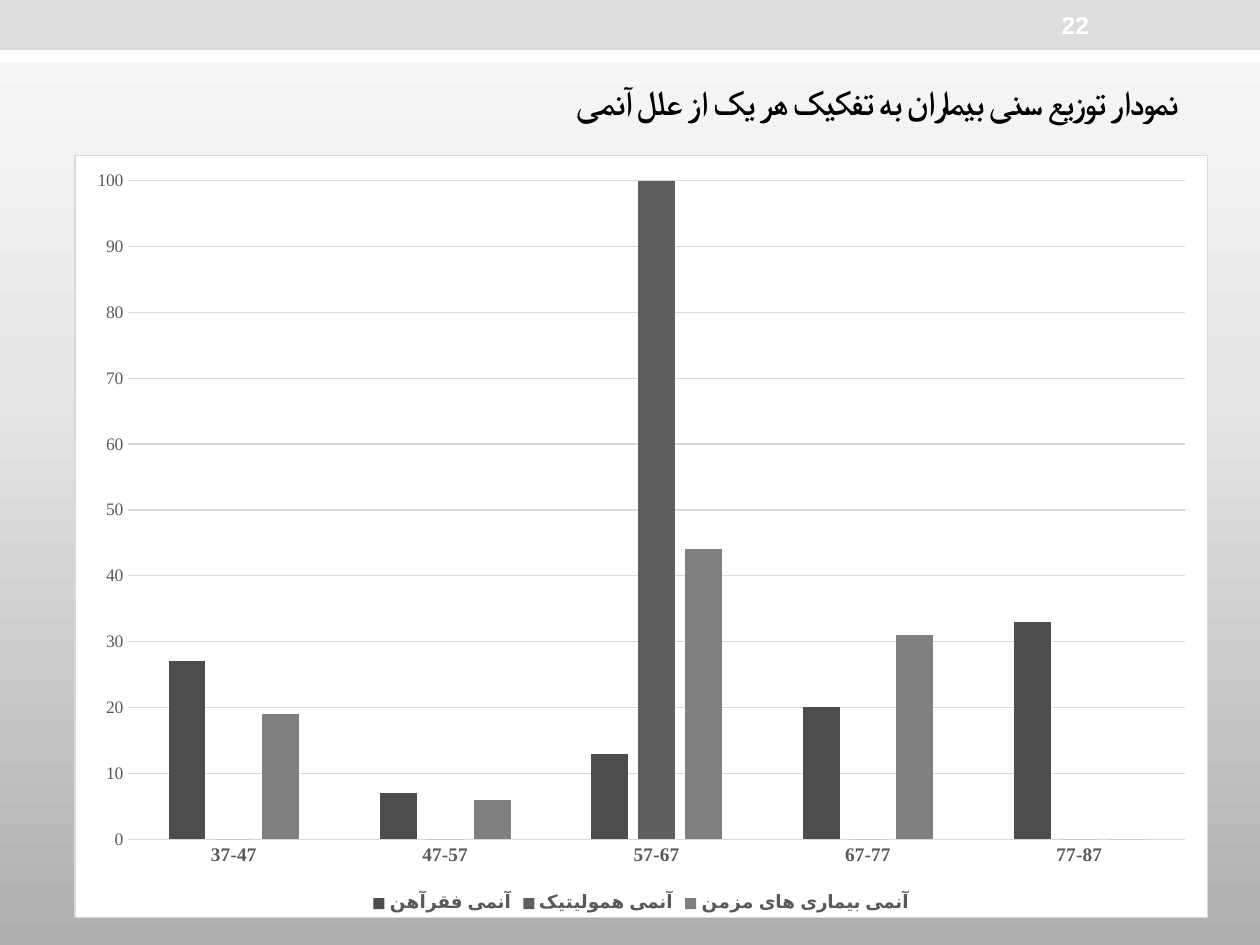
from copy import deepcopy
from dataclasses import dataclass
from lxml.etree import SubElement
from pptx import Presentation
from pptx.chart.data import CategoryChartData as Data
from pptx.dml.color import RGBColor as Rgb
from pptx.enum.chart import XL_CHART_TYPE as Kind, XL_LEGEND_POSITION as Place, XL_TICK_MARK as Tick
from pptx.enum.shapes import MSO_SHAPE as Form
from pptx.enum.text import MSO_ANCHOR as Anchor, PP_ALIGN as Align
from pptx.oxml import parse_xml
from pptx.oxml.ns import nsdecls, qn
from pptx.util import Inches, Pt

WIDE, HIGH = Inches(10), Inches(7.5)
HEX = {"white": "FFFFFF", "black": "000000", "band": "DDDDDD", "grid": "D9D9D9",
       "label": "595959", "iron": "4D4D4D", "lysis": "5F5F5F", "chronic": "808080"}
SHADES = [(0, "F9F9F9"), (0.4, "E7E7E7"), (1, "AFAFAF")]
AGES = ["37-47", "47-57", "57-67", "67-77", "77-87"]


@dataclass
class Box:
    """Place on the slide, in shares of its width and height."""
    x: float
    y: float
    w: float
    h: float

    def emu(self) -> tuple:
        """Give left, top, width and height."""
        return tuple(int(part * size) for part, size in
                     zip((self.x, self.y, self.w, self.h), (WIDE, HIGH) * 2))


@dataclass
class Run:
    """One run of bold text."""
    text: str
    size: float
    face: str
    tone: str
    gap: int = 0


@dataclass
class Cause:
    """One cause of anemia, with its share per age group."""
    name: str
    tone: str
    vals: tuple


BANDS = [(Box(0, 0.032, 1, 0.034), "white"), (Box(0, 0, 1, 0.053), "band")]
TITLE = [Run(" ", 36, "Arial", "black", -1),
         Run("نمودار توزیع سنی بیماران به تفکیک هر یک از علل آنمی", 19.8, "Calibri", "black", -1)]
CAUSES = [Cause("آنمی فقرآهن", "iron", (27, 7, 13, 20, 33)),
          Cause("آنمی همولیتیک", "lysis", (0, 0, 100, 0, 0)),
          Cause("آنمی بیماری های مزمن", "chronic", (19, 6, 44, 31, 0))]


def tint(name: str) -> Rgb:
    """Look up a colour."""
    return Rgb.from_string(HEX[name])


def style(font, size: float, face: str, tone: str, bold: bool = False) -> None:
    """Set the look of a font."""
    font.size, font.name, font.bold = Pt(size), face, bold
    font.color.rgb = tint(tone)


def rule(line) -> None:
    """Draw a thin grey line."""
    line.color.rgb = tint("grid")
    line.width = Pt(0.75)


def shade(page) -> None:
    """Fill the background with a vertical gradient."""
    fill = page.background.fill
    fill.gradient()
    fill.gradient_angle = 270
    last = list(page.element.iter(qn("a:gs")))[-1]
    last.addnext(deepcopy(last))
    for stop, (pos, code) in zip(fill.gradient_stops, SHADES):
        stop.position = pos
        stop.color.rgb = Rgb.from_string(code)


def band(page, box: Box, tone: str) -> None:
    """Draw a plain strip."""
    strip = page.shapes.add_shape(Form.RECTANGLE, *box.emu())
    strip.shadow.inherit = False
    strip.fill.solid()
    strip.fill.fore_color.rgb = tint(tone)
    strip.line.fill.background()


def write(page, box: Box, runs: list[Run], align: Align, rtl: bool = False) -> None:
    """Write one line of runs."""
    frame = page.shapes.add_textbox(*box.emu()).text_frame
    frame.word_wrap = True
    frame.vertical_anchor = Anchor.MIDDLE
    para = frame.paragraphs[0]
    para.alignment = align
    if rtl:
        para._p.get_or_add_pPr().set("rtl", "1")
    for item in runs:
        run = para.add_run()
        run.text = item.text
        style(run.font, item.size, item.face, item.tone, True)
        props = run._r.get_or_add_rPr()
        SubElement(props, qn("a:cs")).set("typeface", item.face)
        if item.gap:
            props.set("spc", str(item.gap * 100))


def plot(page, box: Box, causes: list[Cause]) -> None:
    """Draw the column chart."""
    data = Data()
    data.categories = AGES
    for cause in causes:
        data.add_series(cause.name, cause.vals)
    chart = page.shapes.add_chart(Kind.COLUMN_CLUSTERED, *box.emu(), data).chart
    style(chart.font, 10, "Arial", "black")
    chart.has_title = False
    chart._chartSpace.find(qn("c:chart")).addnext(parse_xml(
        f'<c:spPr {nsdecls("c", "a")}><a:solidFill><a:srgbClr val="{HEX["white"]}"/></a:solidFill>'
        f'<a:ln w="{Pt(0.75)}"><a:solidFill><a:srgbClr val="{HEX["grid"]}"/></a:solidFill></a:ln></c:spPr>'))
    chart.has_legend = True
    chart.legend.position = Place.BOTTOM
    chart.legend.include_in_layout = False
    style(chart.legend.font, 10.5, "Arial", "label", True)

    bars = chart.plots[0]
    bars.gap_width, bars.overlap, bars.vary_by_categories = 219, -27, False
    for bar, cause in zip(bars.series, causes):
        bar.format.fill.solid()
        bar.format.fill.fore_color.rgb = tint(cause.tone)
        bar.invert_if_negative = False

    cat, val = chart.category_axis, chart.value_axis
    for axis in (cat, val):
        axis.major_tick_mark = axis.minor_tick_mark = Tick.NONE
    style(cat.tick_labels.font, 11, "Times New Roman", "label", True)
    style(val.tick_labels.font, 10, "Times New Roman", "label")
    rule(cat.format.line)
    rule(val.major_gridlines.format.line)
    val.format.line.fill.background()
    val.minimum_scale, val.maximum_scale, val.major_unit = 0, 100, 10


def main() -> None:
    """Build and save the slide."""
    deck = Presentation()
    deck.slide_width, deck.slide_height = WIDE, HIGH
    page = deck.slides.add_slide(deck.slide_layouts[6])
    shade(page)
    for box, tone in BANDS:
        band(page, box, tone)
    write(page, Box(0.8, 0, 0.107, 0.053), [Run("22", 14, "Arial", "white")], Align.CENTER)
    write(page, Box(0.059, 0.048, 0.9, 0.095), TITLE, Align.RIGHT, True)
    plot(page, Box(0.059, 0.164, 0.9, 0.808), CAUSES)
    deck.save("out.pptx")


if __name__ == "__main__":
    main()
